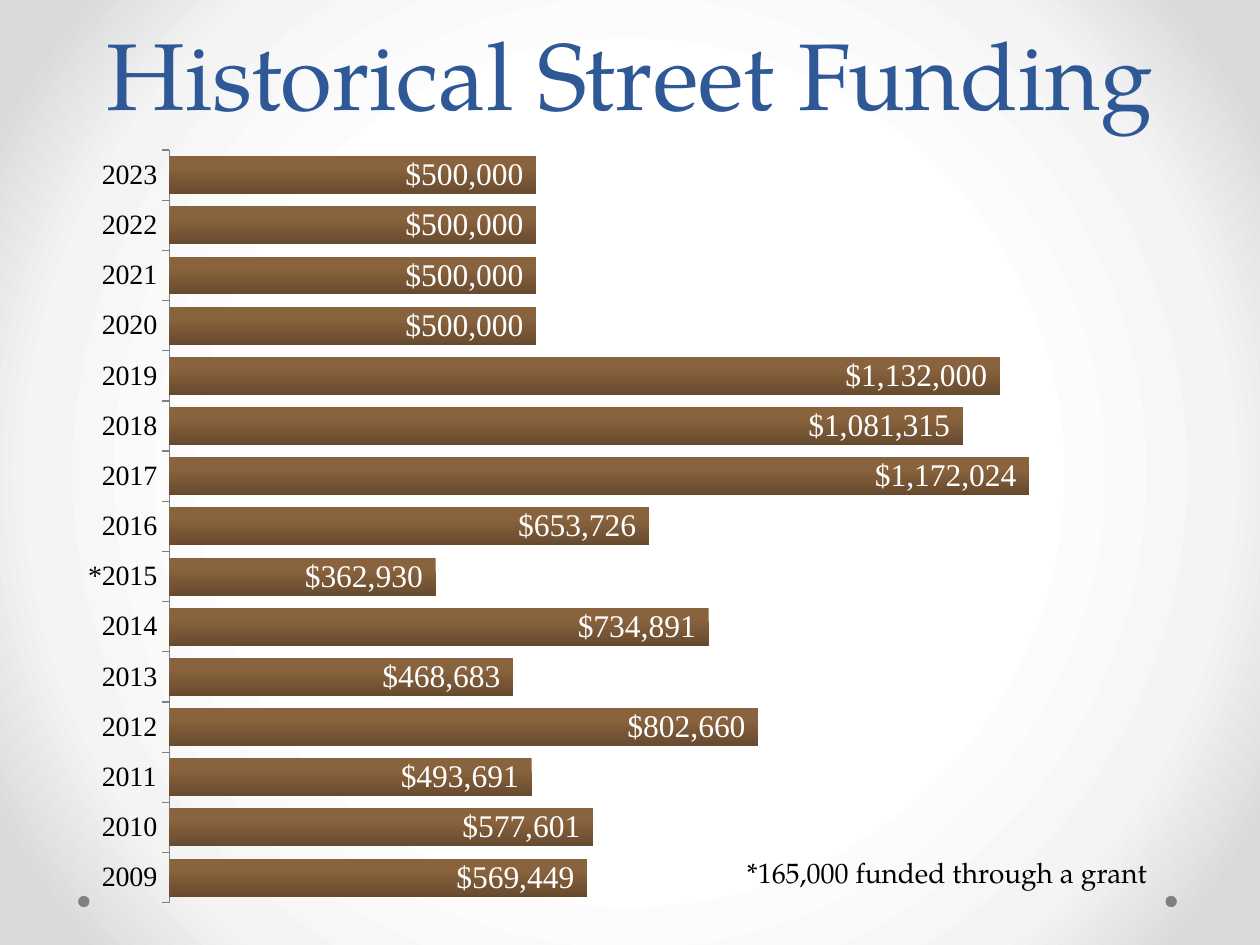
from lxml import etree
from pptx import Presentation
from pptx.chart.data import CategoryChartData
from pptx.dml.color import RGBColor
from pptx.enum.chart import XL_CHART_TYPE, XL_LABEL_POSITION, XL_TICK_LABEL_POSITION, XL_TICK_MARK
from pptx.enum.shapes import MSO_SHAPE
from pptx.enum.text import MSO_ANCHOR, PP_ALIGN
from pptx.oxml import parse_xml
from pptx.oxml.ns import qn
from pptx.util import Pt

BAR = XL_CHART_TYPE.BAR_CLUSTERED
INSIDE_END = XL_LABEL_POSITION.INSIDE_END
LOW = XL_TICK_LABEL_POSITION.LOW
OUTSIDE, NO_TICK = XL_TICK_MARK.OUTSIDE, XL_TICK_MARK.NONE
OVAL = MSO_SHAPE.OVAL
TOP, BOTTOM = MSO_ANCHOR.TOP, MSO_ANCHOR.BOTTOM
LEFT, CENTER = PP_ALIGN.LEFT, PP_ALIGN.CENTER
SERIF, NUMERAL = "TeX Gyre Pagella", "Times New Roman"
DOLLARS = '"$"#,##0_)'

FUNDING = [
    ("2009", 569449), ("2010", 577601), ("2011", 493691), ("2012", 802660),
    ("2013", 468683), ("2014", 734891), ("*2015", 362930), ("2016", 653726),
    ("2017", 1172024), ("2018", 1081315), ("2019", 1132000), ("2020", 500000),
    ("2021", 500000), ("2022", 500000), ("2023", 500000),
]
TEXTS = [
    ("Historical Street Funding", (36, 0, 648, 77.76), BOTTOM,
     {"alignment": CENTER, "line_spacing": Pt(58)}, 54, "2F5897"),
    ("*165,000 funded through a grant", (419.76, 485.28, 246.24, 26.64), TOP,
     {"alignment": LEFT}, 16, "000000"),
]
DOT_LEFTS, DOT_TOP, DOT_SIZE = (44.64, 666), 511.92, 6.48
CHART_BOX = (41.76, 12.24, 648, 504)
PLOT = {"x": 0.085, "y": 0.146, "w": 0.906, "h": 0.854}
BACKDROP = [(50, "FFFFFF"), (76, "F4F4F4"), (92, "DADADA")]
BAR_GRADIENT = [(0.3, "89633D"), (1, "674A2E")]


def rgb(value):
    return RGBColor.from_string(value)


def points(box):
    return [Pt(length) for length in box]


def assign(target, values):
    for name, value in values.items():
        setattr(target, name, value)


def style_font(font, size, color, face):
    assign(font, {"size": Pt(size), "name": face, "bold": False})
    font.color.rgb = rgb(color)


def paint_background(slide):
    slide.background.fill.gradient()
    old = next(slide.element.iter(qn("a:gradFill")))
    stops = "".join(
        f'<a:gs pos="{place * 1000}"><a:srgbClr val="{color}"/></a:gs>'
        for place, color in BACKDROP)
    old.getparent().replace(old, parse_xml(
        '<a:gradFill xmlns:a="http://schemas.openxmlformats.org/drawingml/2006/main" '
        f'rotWithShape="1"><a:gsLst>{stops}</a:gsLst><a:path path="circle">'
        '<a:fillToRect l="50000" t="50000" r="50000" b="50000"/></a:path></a:gradFill>'))


def add_dot(slide, left):
    dot = slide.shapes.add_shape(OVAL, *points((left, DOT_TOP, DOT_SIZE, DOT_SIZE)))
    dot.shadow.inherit = False
    dot.fill.solid()
    dot.fill.fore_color.rgb = rgb("808080")
    dot.line.fill.background()


def add_text(slide, text, box, anchor, layout, size, color):
    frame = slide.shapes.add_textbox(*points(box)).text_frame
    assign(frame, {"word_wrap": True, "vertical_anchor": anchor})
    paragraph = frame.paragraphs[0]
    assign(paragraph, layout)
    run = paragraph.add_run()
    run.text = text
    style_font(run.font, size, color, SERIF)


def place_plot(chart):
    area = chart.element.find(".//" + qn("c:plotArea"))
    layout = area.find(qn("c:layout"))
    if layout is None:
        layout = etree.Element(qn("c:layout"))
        area.insert(0, layout)
    manual = etree.SubElement(layout, qn("c:manualLayout"))
    settings = {"layoutTarget": "inner", "xMode": "edge", "yMode": "edge", **PLOT}
    for name, value in settings.items():
        etree.SubElement(manual, qn("c:" + name)).set("val", str(value))


def add_funding_chart(slide):
    funding = CategoryChartData(number_format=DOLLARS)
    funding.categories = [year for year, _ in FUNDING]
    funding.add_series("Series 1", [amount for _, amount in FUNDING])
    chart = slide.shapes.add_chart(BAR, *points(CHART_BOX), funding).chart
    assign(chart, {"has_legend": False, "has_title": False})
    style_font(chart.font, 18, "000000", SERIF)
    place_plot(chart)

    years, amounts = chart.category_axis, chart.value_axis
    assign(years, {"major_tick_mark": OUTSIDE, "minor_tick_mark": NO_TICK,
                   "tick_label_position": LOW, "has_major_gridlines": False})
    style_font(years.tick_labels.font, 16, "000000", NUMERAL)
    years.format.line.color.rgb = rgb("808080")
    assign(amounts, {"visible": False, "has_major_gridlines": False,
                     "minimum_scale": 0, "maximum_scale": 1400000})

    plot = chart.plots[0]
    assign(plot, {"gap_width": 32, "overlap": -8, "vary_by_categories": False,
                  "has_data_labels": True})
    assign(plot.data_labels, {"show_value": True, "position": INSIDE_END,
                              "number_format": DOLLARS, "number_format_is_linked": False})
    style_font(plot.data_labels.font, 18, "FFFFFF", NUMERAL)

    fill = plot.series[0].format.fill
    fill.gradient()
    fill.gradient_angle = 270
    for stop, (place, color) in zip(fill.gradient_stops, BAR_GRADIENT):
        stop.position = place
        stop.color.rgb = rgb(color)


def main():
    deck = Presentation()
    assign(deck, {"slide_width": Pt(720), "slide_height": Pt(540)})
    slide = deck.slides.add_slide(deck.slide_layouts[6])
    paint_background(slide)
    for left in DOT_LEFTS:
        add_dot(slide, left)
    for entry in TEXTS:
        add_text(slide, *entry)
    add_funding_chart(slide)
    deck.save("out.pptx")


if __name__ == "__main__":
    main()
